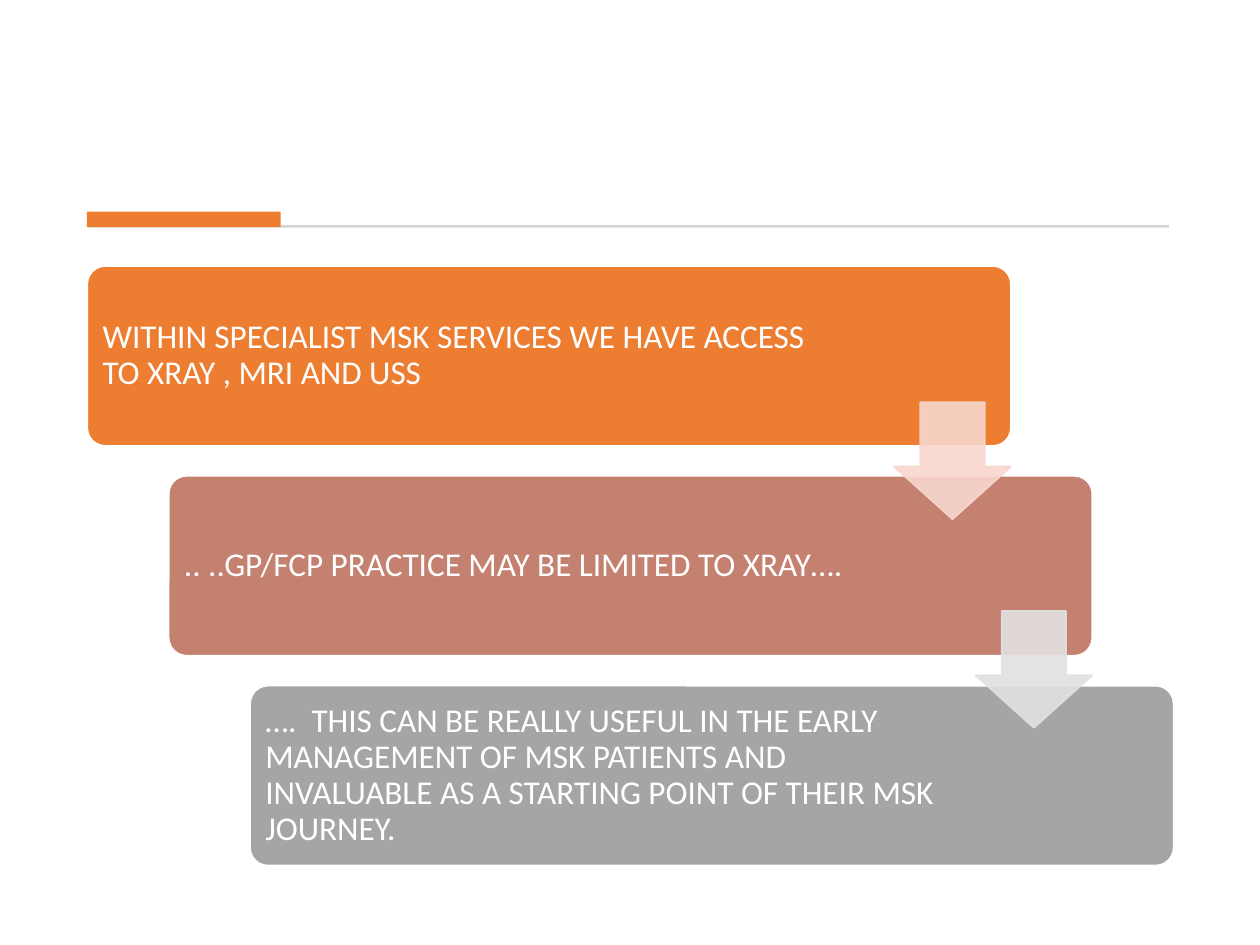
from lxml import etree
from pptx import Presentation
from pptx.dml.color import RGBColor
from pptx.enum.shapes import MSO_SHAPE as Kind
from pptx.enum.text import MSO_ANCHOR as Anchor
from pptx.oxml.ns import qn
from pptx.util import Pt

deck = Presentation()
deck.slide_width, deck.slide_height = Pt(720), Pt(540)
slide = deck.slides.add_slide(deck.slide_layouts[6])


def draw(kind, left, top, width, height, fill, line=None, adj=(), alpha=None):
    """Add a preset shape; alpha is the opacity of fill and line in percent."""
    shape = slide.shapes.add_shape(kind, Pt(left), Pt(top), Pt(width), Pt(height))
    shape.shadow.inherit = False
    for i, ratio in enumerate(adj):
        shape.adjustments[i] = ratio
    shape.fill.solid()
    shape.fill.fore_color.rgb = RGBColor.from_string(fill)
    if line:
        shape.line.color.rgb = RGBColor.from_string(line)
        shape.line.width = Pt(1)
    else:
        shape.line.fill.background()
    if alpha:
        for tint in shape.element.spPr.iter(qn("a:srgbClr")):
            etree.SubElement(tint, qn("a:alpha")).set("val", str(alpha * 1000))


def write(text, left, top, width, height, size=19, color="FFFFFF", font="Calibri"):
    frame = slide.shapes.add_textbox(Pt(left), Pt(top), Pt(width), Pt(height)).text_frame
    frame.word_wrap = True
    frame.vertical_anchor = Anchor.MIDDLE
    frame.margin_left = frame.margin_right = Pt(5.7)
    frame.margin_top = frame.margin_bottom = Pt(5.7)
    para = frame.paragraphs[0]
    para.line_spacing = 0.9
    run = para.add_run()
    run.text = text
    run.font.size = Pt(size)
    run.font.name = font
    run.font.color.rgb = RGBColor.from_string(color)


# Divider under the title area
draw(Kind.RECTANGLE, 51, 128.6, 617, 1.5, "D5D5D5")
draw(Kind.RECTANGLE, 49.7, 121, 110.7, 8.8, "ED7D31")

# Staircase of steps
left, top, width, height = 49.9, 152, 527.8, 102.8
right, down = 46.5, 119.9
steps = [
    ("WITHIN SPECIALIST MSK SERVICES WE HAVE ACCESS TO XRAY , MRI AND USS", "ED7D31", 417),
    (".. ..GP/FCP PRACTICE MAY BE LIMITED TO XRAY….", "C48170", 408),
    ("….  THIS CAN BE REALLY USEFUL IN THE EARLY MANAGEMENT OF MSK PATIENTS "
     "AND INVALUABLE AS A STARTING POINT OF THEIR MSK JOURNEY.", "A5A5A5", 408),
]
for i, (text, fill, wide) in enumerate(steps):
    x, y = left + i * right, top + i * down
    draw(Kind.ROUNDED_RECTANGLE, x, y, width, height, fill, line="FFFFFF", adj=[0.1])
    write(text, x + 3, y + 3, wide, height - 6)

# Arrows from each step to the next
side = 66.8
for i, fill in enumerate(["F8D7CE", "E1E1E1"]):
    x, y = left + width - side + i * right, 229.9 + i * 119.2
    draw(Kind.DOWN_ARROW, x, y, side, side, fill, line=fill, adj=[0.55, 0.45], alpha=90)

deck.save("out.pptx")
